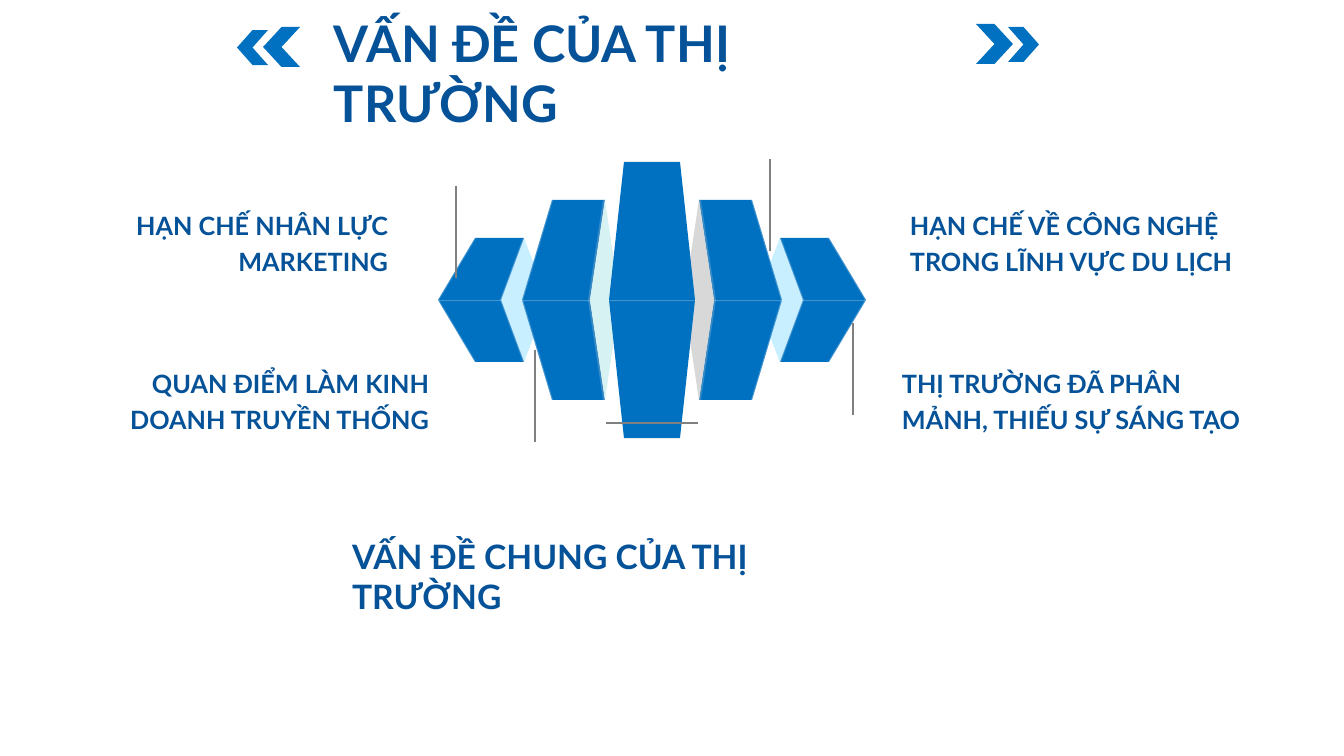
import pptx
import pptx.util
import pptx.dml.color
import pptx.enum.shapes
import pptx.enum.text
import pptx.oxml.ns
import pptx.oxml.xmlchemy

PX = 914400 / 100.8  # EMU in one px
FONT = "Lato"
COLORS = {
    "body": "0070C0",
    "text": "055298",
    "leader": "808080",
    "sky": "C7EFFF",
    "mint": "D7F2F3",
    "grey": "D8D8D8",
    "white": "FFFFFF",
}
AXIS, MID = 652, 300  # centre of the diagram
LEFT, RIGHT = -1, 1
ALIGN = pptx.enum.text.PP_ALIGN


def emu(px):
    return pptx.util.Emu(round(px * PX))


def rgb(name):
    return pptx.dml.color.RGBColor.from_string(COLORS[name])


def paint(sp, color, opacity=100):
    sp.shadow.inherit = False
    sp.fill.solid()
    sp.fill.fore_color.rgb = rgb(color)
    sp.line.fill.background()
    if opacity < 100:
        clr = sp._element.spPr.find(".//" + pptx.oxml.ns.qn("a:srgbClr"))
        alpha = pptx.oxml.xmlchemy.OxmlElement("a:alpha")
        alpha.set("val", str(opacity * 1000))
        clr.append(alpha)


def add_polygon(s, side, points, color, opacity=100):
    """Points are (distance from the axis, height above the middle)."""
    pts = [(AXIS + side * dx, MID - dy) for dx, dy in points]
    builder = s.shapes.build_freeform(*pts[0], scale=PX)
    builder.add_line_segments(pts[1:], close=True)
    paint(builder.convert_to_shape(), color, opacity)


def add_halves(s, side, points, color):
    for sign in (1, -1):
        add_polygon(s, side, [(x, sign * y) for x, y in points], color)


def add_seam(s, side, near, far):
    add_polygon(s, side, [(near, 0), (far, 0), (far, -1), (near, -1)], "white", 25)


def add_edge(s, side, middle, tip, height, width, color):
    add_polygon(s, side, [(middle, 0), (tip, height), (tip + width, height),
                          (middle + width, 0), (tip + width, -height),
                          (tip, -height)], color, 25)


def add_gap(s, side, near, tip, far, height, color):
    add_polygon(s, side, [(near, 0), (tip, height), (far, 0), (tip, -height)], color)


def add_wing(s, side, near, near_tip, far_tip, far, height):
    add_halves(s, side, [(near, 0), (near_tip, height), (far_tip, height), (far, 0)], "body")
    add_seam(s, side, near, far)
    add_edge(s, side, far - 1, far_tip - 1, height, 1, "white")


def add_chevron(s, x, y, w, h, side):
    sp = s.shapes.add_shape(pptx.enum.shapes.MSO_SHAPE.CHEVRON,
                            emu(x), emu(y), emu(w), emu(h))
    sp.rotation = 180 if side == LEFT else 0
    paint(sp, "body")


def add_leader(s, x1, y1, x2, y2):
    line = s.shapes.add_connector(pptx.enum.shapes.MSO_CONNECTOR.STRAIGHT,
                                  emu(x1), emu(y1), emu(x2), emu(y2))
    line.line.color.rgb = rgb("leader")
    line.line.width = pptx.util.Pt(1.5)
    line._element.spPr.append(pptx.oxml.xmlchemy.OxmlElement("a:effectLst"))


def add_text(s, x, y, w, h, text, size, align=ALIGN.LEFT, insets=(10, 5, 10, 5), spacing=1.0):
    tf = s.shapes.add_textbox(emu(x), emu(y), emu(w), emu(h)).text_frame
    tf.word_wrap = True
    tf.margin_left, tf.margin_top, tf.margin_right, tf.margin_bottom = map(emu, insets)
    p = tf.paragraphs[0]
    p.alignment = align
    p.line_spacing = spacing
    r = p.add_run()
    r.text = text
    r.font.name = FONT
    r.font.size = pptx.util.Pt(size)
    r.font.bold = True
    r.font.color.rgb = rgb("text")


def add_label(s, x, y, w, text, align):
    add_text(s, x, y, w, 34, text, 18, align, (0, 0, 8, 0), 1.2)


def main():
    prs = pptx.Presentation()
    prs.slide_width, prs.slide_height = emu(1344), emu(756)
    s = prs.slides.add_slide(prs.slide_layouts[6])

    # Title between two pairs of chevrons
    add_chevron(s, 237, 30, 31, 35, LEFT)
    add_chevron(s, 263, 27, 37, 40, LEFT)
    add_text(s, 324, 7, 640, 72, "VẤN ĐỀ CỦA THỊ TRƯỜNG", 36)
    add_chevron(s, 1008, 27, 31, 35, RIGHT)
    add_chevron(s, 976, 24, 37, 40, RIGHT)

    # Outer wings
    for side in (RIGHT, LEFT):
        add_gap(s, side, 104, 128, 151, 62, "sky")
        add_wing(s, side, 151, 128, 177, 214, 62)
        add_edge(s, side, 151, 128, 62, 1, "white")

    # Inner wings
    for side, gap_color in ((LEFT, "mint"), (RIGHT, "grey")):
        add_wing(s, side, 62, 47, 100, 130, 100)
        add_gap(s, side, 32, 47, 62, 100, gap_color)
        add_edge(s, side, 62, 47, 100, 2, "grey")

    # Central column
    add_halves(s, RIGHT, [(-43, 0), (-28, 138), (28, 138), (43, 0)], "body")
    add_seam(s, RIGHT, -43, 43)

    # Leader lines
    for x, y in ((770, 159), (456, 186), (853, 323), (535, 350)):
        add_leader(s, x, y, x, y + 92)
    add_leader(s, 606, 423, 698, 423)

    # Labels
    add_label(s, 128, 204, 268, "HẠN CHẾ NHÂN LỰC MARKETING", ALIGN.RIGHT)
    add_text(s, 342, 531, 560, 50, "VẤN ĐỀ CHUNG CỦA THỊ TRƯỜNG", 24)
    add_label(s, 117, 362, 320, "QUAN ĐIỂM LÀM KINH DOANH TRUYỀN THỐNG", ALIGN.RIGHT)
    add_label(s, 910, 204, 349, "HẠN CHẾ VỀ CÔNG NGHỆ TRONG LĨNH VỰC DU LỊCH", ALIGN.LEFT)
    add_label(s, 902, 362, 349, "THỊ TRƯỜNG ĐÃ PHÂN MẢNH, THIẾU SỰ SÁNG TẠO", ALIGN.LEFT)

    prs.save("out.pptx")


if __name__ == "__main__":
    main()
